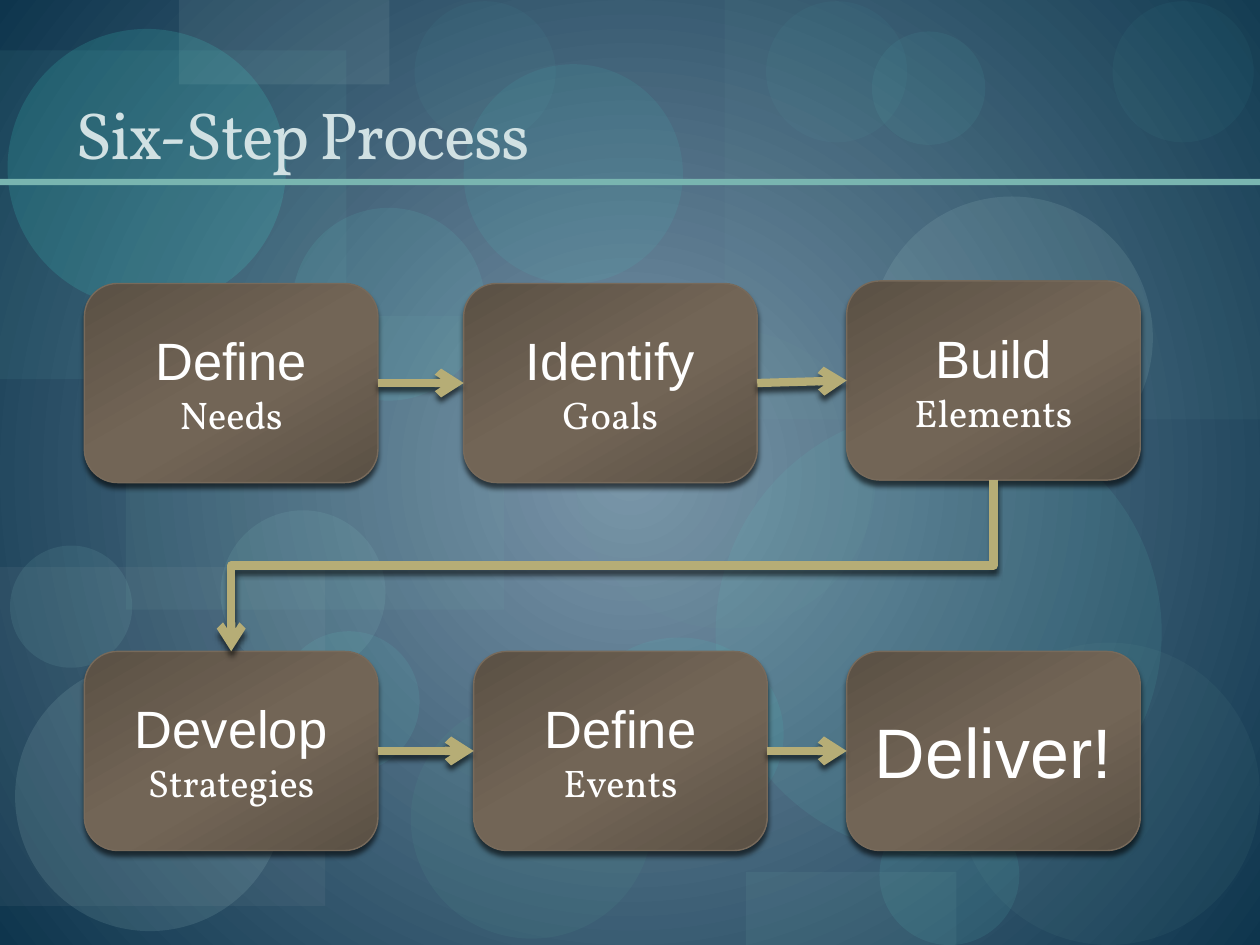
from lxml import etree
from pptx import Presentation, util as u
from pptx.dml.color import RGBColor
from pptx.enum import shapes as sh, text as tx
from pptx.oxml import parse_xml
from pptx.oxml.ns import nsdecls, qn

NS = nsdecls("a")
SHADE = (f'<a:effectLst {NS}><a:outerShdw blurRad="38100" dist="38100" dir="5400000" '
         'algn="ctr" rotWithShape="0"><a:srgbClr val="000000"><a:alpha val="60000"/>'
         '</a:srgbClr></a:outerShdw></a:effectLst>')


def ink(color, code):
    color.rgb = RGBColor.from_string(code)


def blend(fill, root, stops, way):
    """Turn fill into a gradient of (percent, hex) stops running the given way."""
    fill.gradient()
    old = root.find(".//" + qn("a:gradFill"))
    marks = "".join(f'<a:gs pos="{pos * 1000}"><a:srgbClr val="{code}"/></a:gs>'
                    for pos, code in stops)
    new = parse_xml(f'<a:gradFill {NS} rotWithShape="1"><a:gsLst>{marks}</a:gsLst>{way}</a:gradFill>')
    old.getparent().replace(old, new)


deck = Presentation()
deck.slide_width, deck.slide_height = u.Inches(10), u.Inches(7.5)
slide = deck.slides.add_slide(deck.slide_layouts[5])
parts = slide.shapes

# Background
blend(slide.background.fill, slide._element, [(0, "7B96AA"), (100, "0E354D")],
      '<a:path path="circle"><a:fillToRect l="50000" t="50000" r="50000" b="50000"/></a:path>')

# Backdrop: kind, left, top, width, height, colour, opacity in percent
R, O = sh.MSO_SHAPE.RECTANGLE, sh.MSO_SHAPE.OVAL
backdrop = [
    (R, 1, 2.51, 3, 2.33, "79B5B0", 9),
    (O, 3.26, 5.55, 1.92, 1.9, "549791", 13),
    (R, 5.75, 0, 4.25, 3.33, "79B5B0", 6),
    (R, 0, 4.5, 2.58, 2.69, "B2B7BA", 8),
    (O, 4.57, 2.61, 2.38, 2.38, "70A39E", 8),
    (O, 6.98, 6.39, 1.11, 1.11, "65E8DC", 9),
    (O, 6.91, 1.56, 2.24, 2.24, "C1E8E4", 11),
    (O, 0.12, 5.25, 2.14, 2.14, "C1E8E4", 12),
    (O, 2.21, 5.01, 1.12, 1.12, "65E8DC", 9),
    (O, 4.56, 5.06, 1.66, 1.53, "44EADC", 8),
    (R, 0, 0.4, 2.75, 2.61, "77D6CE", 7),
    (R, 1.42, 0, 1.67, 0.67, "BED7D4", 10),
    (O, 0.06, 0.23, 2.21, 2.21, "44EADC", 15),
    (O, 0.08, 4.33, 0.97, 0.97, "97DCD6", 10),
    (O, 2.32, 1.65, 1.53, 1.53, "65E8DC", 9),
    (O, 3.68, 0.51, 1.74, 1.74, "44EADC", 8),
    (O, 5.68, 3.25, 3.54, 3.54, "61CDC4", 10),
    (O, 6.08, 0.01, 1.12, 1.12, "65E8DC", 4),
    (O, 7.6, 5.1, 2.4, 2.4, "70A39E", 8),
    (O, 1.75, 4.05, 1.31, 1.31, "97DCD6", 10),
    (O, 6.92, 0.25, 0.9, 0.9, "65E8DC", 6),
    (O, 8.83, 0.01, 1.12, 1.12, "65E8DC", 4),
    (R, 5.92, 6.92, 1.67, 0.58, "79B5B0", 10),
    (O, 3.29, 0.01, 1.12, 1.12, "65E8DC", 4),
    (R, 0, 1.42, 10, 0.05, "79B5B0", 100),
]
for kind, *place, code, alpha in backdrop:
    form = parts.add_shape(kind, *map(u.Inches, place))
    form.shadow.inherit = False
    form.line.fill.background()
    form.fill.solid()
    ink(form.fill.fore_color, code)
    tint = form._element.spPr.find(".//" + qn("a:srgbClr"))
    etree.SubElement(tint, qn("a:alpha")).set("val", str(alpha * 1000))

# Title, in front of the backdrop
title = parts.title
parts._spTree.append(title._element)
title.left, title.top, title.width, title.height = map(u.Inches, (0.5, 0.17, 9, 1.25))
frame = title.text_frame
frame.text = "Six-Step Process"
frame.auto_size = tx.MSO_AUTO_SIZE.NONE
frame.vertical_anchor = tx.MSO_ANCHOR.BOTTOM
line = frame.paragraphs[0]
line.alignment = tx.PP_ALIGN.LEFT
line.font.name, line.font.size = "Vollkorn", u.Pt(38)
ink(line.font.color, "D1E1E3")
line.font._element.set("spc", "-100")

# Steps: left, top, lines of text
WIDE, HIGH = 2.33, 1.58
LEFT, RIGHT, LOW = 0.67, 6.72, 5.17
steps = [
    (LEFT, 2.25, ["Define", "Needs"]),
    (3.68, 2.25, ["Identify", "Goals"]),
    (RIGHT, 2.23, ["Build", "Elements"]),
    (LEFT, LOW, ["Develop", "Strategies"]),
    (3.76, LOW, ["Define", "Events"]),
    (RIGHT, LOW, ["Deliver!"]),
]
DARK, PALE = "5A5044", "726556"
boxes = []
for left, top, words in steps:
    box = parts.add_shape(sh.MSO_SHAPE.ROUNDED_RECTANGLE,
                          *map(u.Inches, (left, top, WIDE, HIGH)))
    blend(box.fill, box._element, [(0, DARK), (48, PALE), (58, PALE), (100, DARK)],
          '<a:lin ang="3600000" scaled="0"/>')
    ink(box.line.color, "776A5B")
    box.line.width = u.Pt(0.79)
    box._element.spPr.append(parse_xml(SHADE))
    frame = box.text_frame
    frame.text = "\n".join(words)
    frame.vertical_anchor = tx.MSO_ANCHOR.MIDDLE
    looks = [("Arial", 30), ("Vollkorn", 22)] if len(words) > 1 else [("Arial", 40)]
    for line, (face, size) in zip(frame.paragraphs, looks):
        line.alignment = tx.PP_ALIGN.CENTER
        line.font.name, line.font.size = face, u.Pt(size)
        ink(line.font.color, "FFFFFF")
    boxes.append(box)

# Arrows from each step to the next; the one to the lower row bends
for start, end in zip(boxes, boxes[1:]):
    bent = end.left < start.left
    kind = sh.MSO_CONNECTOR.ELBOW if bent else sh.MSO_CONNECTOR.STRAIGHT
    arrow = parts.add_connector(kind, 0, 0, 0, 0)
    arrow.begin_connect(start, 2 if bent else 3)
    arrow.end_connect(end, 0 if bent else 1)
    props = arrow._element.spPr
    if bent:  # a quarter turn makes it leave downwards
        x, y, w, h = arrow.left, arrow.top, arrow.width, arrow.height
        arrow.left, arrow.top = x + (w - h) // 2, y + (h - w) // 2
        arrow.width, arrow.height = h, w
        props.xfrm.flipH = False
        props.xfrm.set("rot", "5400000")
    ink(arrow.line.color, "B6AD76")
    arrow.line.width = u.Pt(4.72)
    etree.SubElement(arrow.line._get_or_add_ln(), qn("a:tailEnd")).set("type", "arrow")
    props.append(parse_xml(SHADE))

deck.save("out.pptx")
